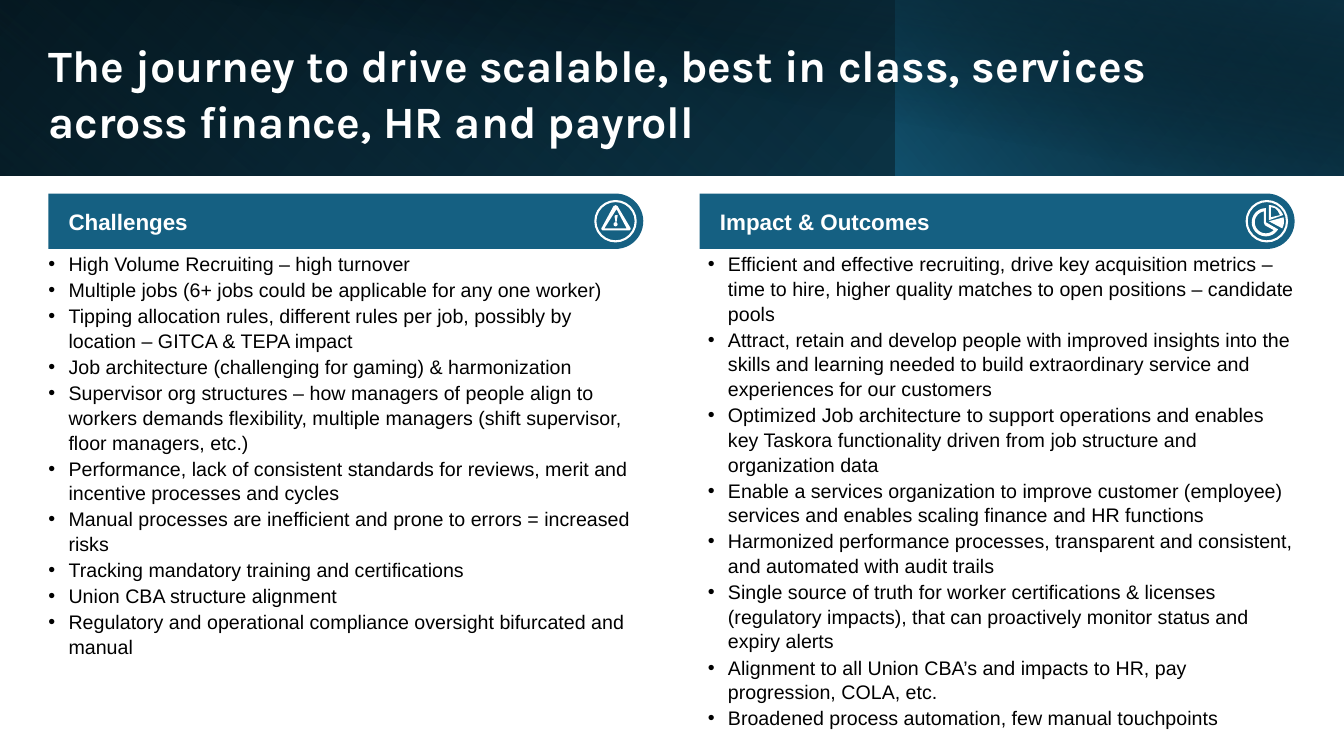
from dataclasses import dataclass
from math import cos, radians, sin

from lxml.etree import SubElement
from pptx import Presentation
from pptx.dml.color import RGBColor
from pptx.enum.shapes import MSO_SHAPE as Shape
from pptx.enum.text import MSO_ANCHOR as Anchor, MSO_AUTO_SIZE as AutoSize, PP_ALIGN as Align
from pptx.oxml.ns import qn
from pptx.util import Inches, Pt


@dataclass(frozen=True)
class Theme:
    teal: str = "156082"
    navy: str = "0B3041"
    ocean: str = "104862"
    black: str = "000000"
    white: str = "FFFFFF"
    title_font: str = "Karla"
    body_font: str = "Arial"
    title_size: int = 32
    heading_size: int = 16
    body_size: int = 14


THEME = Theme()
WIDTH, HEIGHT = 13.33, 7.5
HEADER_HEIGHT = 1.74
MARGIN = 0.48
COLUMN_WIDTH, COLUMN_PITCH = 5.9, 6.46
BAR_TOP, BAR_HEIGHT = 1.92, 0.55
LIST_TOP = 2.49
BADGE_SIZE = 0.4

TITLE = "The journey to drive scalable, best in class, services across finance, HR and payroll"
CHALLENGES = [
    "High Volume Recruiting – high turnover",
    "Multiple jobs (6+ jobs could be applicable for any one worker)",
    "Tipping allocation rules, different rules per job, possibly by location – GITCA & TEPA impact",
    "Job architecture (challenging for gaming) & harmonization",
    "Supervisor org structures – how managers of people align to workers demands flexibility, "
    "multiple managers (shift supervisor, floor managers, etc.)",
    "Performance, lack of consistent standards for reviews, merit and incentive processes and cycles",
    "Manual processes are inefficient and prone to errors = increased risks",
    "Tracking mandatory training and certifications",
    "Union CBA structure alignment",
    "Regulatory and operational compliance oversight bifurcated and manual",
]
OUTCOMES = [
    "Efficient and effective recruiting, drive key acquisition metrics – time to hire, "
    "higher quality matches to open positions – candidate pools",
    "Attract, retain and develop people with improved insights into the skills and learning "
    "needed to build extraordinary service and experiences for our customers",
    "Optimized Job architecture to support operations and enables key Taskora functionality "
    "driven from job structure and organization data",
    "Enable a services organization to improve customer (employee) services and enables "
    "scaling finance and HR functions",
    "Harmonized performance processes, transparent and consistent, and automated with audit trails",
    "Single source of truth for worker certifications & licenses (regulatory impacts), "
    "that can proactively monitor status and expiry alerts",
    "Alignment to all Union CBA’s and impacts to HR, pay progression, COLA, etc.",
    "Broadened process automation, few manual touchpoints",
]


def arc(x, y, radius, start, end, steps=24):
    """Points on a circle, from start to end degrees, clockwise from the right."""
    angles = [radians(start + (end - start) * i / steps) for i in range(steps + 1)]
    return [(x + radius * cos(a), y + radius * sin(a)) for a in angles]


# Icon contours, in inches from the centre of their badge
WARNING = [
    [(-0.13, 0.09), (-0.14, 0.08), (-0.14, 0.07), (-0.02, -0.15), (0, -0.16), (0.02, -0.15),
     (0.15, 0.07), (0.15, 0.08), (0.14, 0.09)],
    [(-0.11, 0.07), (0.01, -0.12), (0.11, 0.07)],
    [(-0.01, -0.05), (0, -0.06), (0.02, -0.06), (0.02, -0.05), (0.01, 0.01), (0, 0.01)],
    arc(0, 0.03, 0.02, 0, 345),
]
PIE = [
    [(0.02, 0), *arc(0.02, 0, 0.15, -15, 28)],
    [(0.02, -0.01), *arc(0.02, -0.01, 0.15, -90, -20)],
    [(0.04, -0.04), (0.04, -0.14), (0.08, -0.13), (0.11, -0.1), (0.13, -0.06)],
    [(-0.01, 0.01), *arc(-0.01, 0.01, 0.14, 30, 270)],
    [(-0.03, 0.01), (-0.02, 0.04), *arc(-0.01, 0.01, 0.11, 45, 260)],
]


def write(frame, lines, *, size, color, font, bold=False, spacing=1.0, after=0, hanging=0,
          anchor=Anchor.TOP, insets=(0, 0, 0, 0)):
    frame.word_wrap = True
    frame.vertical_anchor = anchor
    frame.margin_left, frame.margin_top, frame.margin_right, frame.margin_bottom = map(Inches, insets)
    for i, line in enumerate(lines):
        paragraph = frame.add_paragraph() if i else frame.paragraphs[0]
        paragraph.alignment = Align.LEFT
        paragraph.line_spacing = spacing
        paragraph.space_before, paragraph.space_after = Pt(0), Pt(after)
        if hanging:
            props = paragraph._p.get_or_add_pPr()
            props.set("marL", str(Inches(hanging)))
            props.set("indent", str(-Inches(hanging)))
        run = paragraph.add_run()
        run.text = line
        run.font.size, run.font.name, run.font.bold = Pt(size), font, bold
        run.font.color.rgb = RGBColor.from_string(color)


def place(shape, left, top, width, height):
    shape.left, shape.top, shape.width, shape.height = map(Inches, (left, top, width, height))


def paint(shape, color):
    shape.shadow.inherit = False
    shape.fill.solid()
    shape.fill.fore_color.rgb = RGBColor.from_string(color)
    shape.line.fill.background()


def add_gradient(slide, box, stops, angle, flip=True, rotation=0):
    """Add a rectangle whose stops are (position %, colour, opacity %)."""
    panel = slide.shapes.add_shape(Shape.RECTANGLE, *map(Inches, box))
    paint(panel, THEME.black)
    panel.rotation = rotation
    props = panel._element.spPr
    if flip:
        props.find(qn("a:xfrm")).set("flipH", "1")
    solid = props.find(qn("a:solidFill"))
    gradient = SubElement(props, qn("a:gradFill"), rotWithShape="1")
    props.replace(solid, gradient)
    stop_list = SubElement(gradient, qn("a:gsLst"))
    for position, color, opacity in stops:
        stop = SubElement(stop_list, qn("a:gs"), pos=str(position * 1000))
        tint = SubElement(stop, qn("a:srgbClr"), val=color)
        if opacity < 100:
            SubElement(tint, qn("a:alpha"), val=str(opacity * 1000))
    SubElement(gradient, qn("a:lin"), ang=str(angle * 60000), scaled="0")


def add_header(slide, width, height):
    split = width * 0.666
    add_gradient(slide, (0, 0, width, height), [(0, THEME.black, 100), (100, THEME.ocean, 100)], 140)
    add_gradient(slide, (0, 0, split, height), [(20, THEME.teal, 0), (100, THEME.navy, 55)], 230,
                 rotation=180)
    add_gradient(slide, (split, 0, width - split, height),
                 [(0, THEME.teal, 66), (100, THEME.black, 30)], 220)
    add_gradient(slide, (0.5, 0, width - 0.5, height), [(50, THEME.black, 0), (99, THEME.navy, 52)],
                 280, flip=False)
    title = slide.shapes.title
    slide.shapes._spTree.append(title._element)
    place(title, MARGIN, 0.36, width - 2 * MARGIN, 1.08)
    write(title.text_frame, [TITLE], size=THEME.title_size, color=THEME.white,
          font=THEME.title_font, bold=True, spacing=1.03)
    title.text_frame.auto_size = AutoSize.NONE


def add_badge(slide, x, y, contours):
    """Centre a ringed icon on x, y."""
    corner = (x - BADGE_SIZE / 2, y - BADGE_SIZE / 2)
    ring = slide.shapes.add_shape(Shape.OVAL, *map(Inches, (*corner, BADGE_SIZE, BADGE_SIZE)))
    paint(ring, THEME.teal)
    ring.line.color.rgb = RGBColor.from_string(THEME.white)
    ring.line.width = Pt(1.5)
    outlines = [[(Inches(x + dx), Inches(y + dy)) for dx, dy in contour] for contour in contours]
    builder = slide.shapes.build_freeform(*outlines[0][0])
    for i, (start, *rest) in enumerate(outlines):
        if i:
            builder.move_to(*start)
        builder.add_line_segments(rest, close=True)
    paint(builder.convert_to_shape(), THEME.white)


def add_column(slide, left, heading, items, body, icon, list_height, list_inset=0):
    place(body, left + list_inset, LIST_TOP, COLUMN_WIDTH - list_inset, list_height)
    write(body.text_frame, items, size=THEME.body_size, color=THEME.black, font=THEME.body_font,
          spacing=1.05, after=1, hanging=0.2)
    body.text_frame.auto_size = AutoSize.NONE

    middle = BAR_TOP + BAR_HEIGHT / 2
    bar = slide.shapes.add_shape(Shape.ROUND_2_SAME_RECTANGLE, 0, 0, 0, 0)
    place(bar, left + (COLUMN_WIDTH - BAR_HEIGHT) / 2, middle - COLUMN_WIDTH / 2,
          BAR_HEIGHT, COLUMN_WIDTH)
    bar.rotation = 90
    bar.adjustments[0], bar.adjustments[1] = 0.5, 0
    paint(bar, THEME.teal)
    write(bar.text_frame, [heading], size=THEME.heading_size, color=THEME.white,
          font=THEME.body_font, bold=True, anchor=Anchor.MIDDLE, insets=(0.1, 0.1, 0.1, 0.2))
    bar.text_frame._txBody.bodyPr.set("vert", "vert270")
    add_badge(slide, left + COLUMN_WIDTH - BAR_HEIGHT / 2, middle, icon)


def main():
    deck = Presentation()
    deck.slide_width, deck.slide_height = Inches(WIDTH), Inches(HEIGHT)
    slide = deck.slides.add_slide(deck.slide_layouts.get_by_name("Two Content"))
    _, challenges, outcomes = slide.placeholders
    add_header(slide, WIDTH, HEADER_HEIGHT)
    add_column(slide, MARGIN, "Challenges", CHALLENGES, challenges, WARNING, 3.9)
    add_column(slide, MARGIN + COLUMN_PITCH, "Impact & Outcomes", OUTCOMES, outcomes, PIE, 4.57,
               list_inset=0.08)
    deck.save("out.pptx")


if __name__ == "__main__":
    main()
